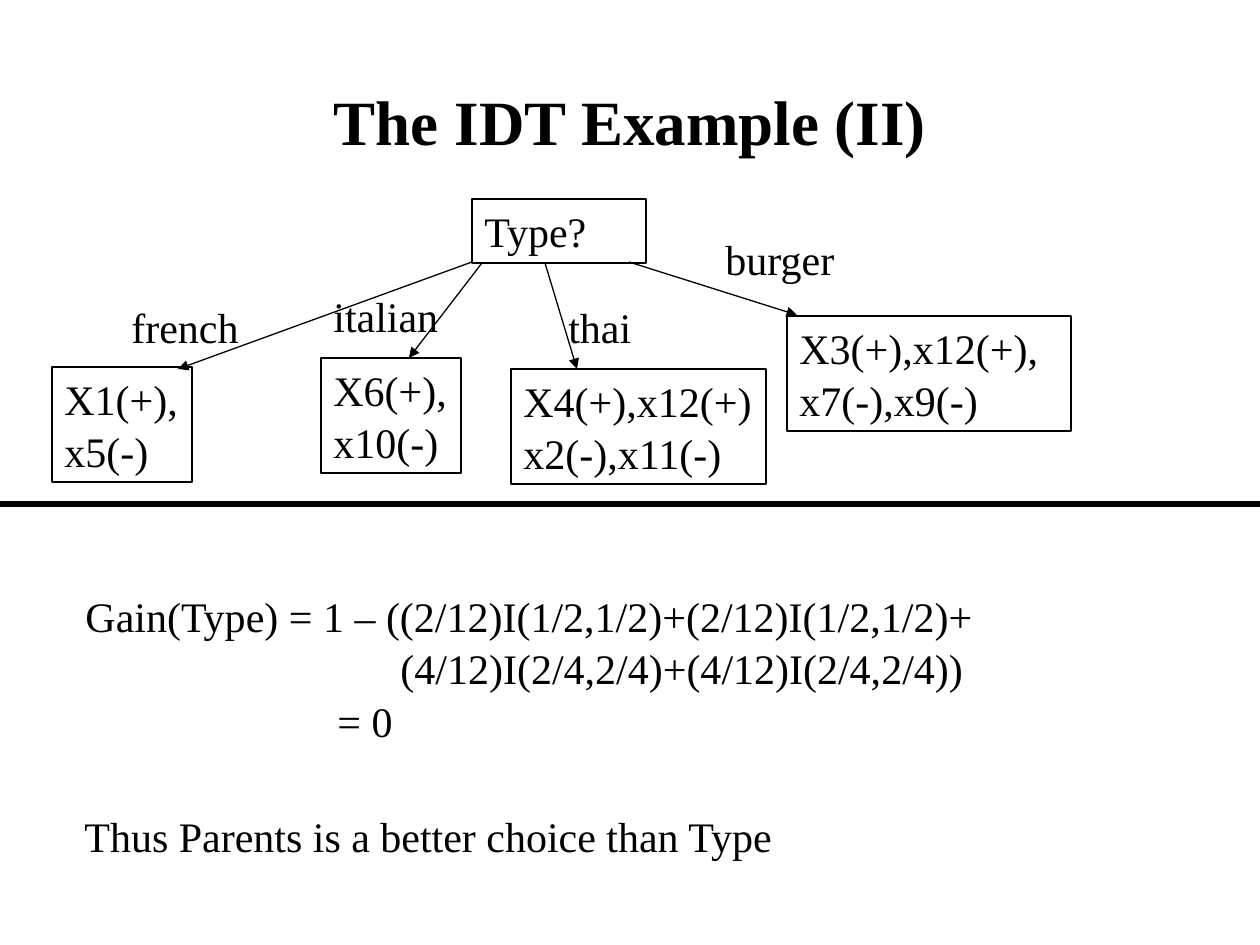
from dataclasses import dataclass

from lxml import etree
from pptx import Presentation, util as u
from pptx.dml.color import RGBColor
from pptx.enum import shapes as sh, text as tx
from pptx.oxml.ns import qn


@dataclass(frozen=True)
class Theme:
    ink: RGBColor = RGBColor(0, 0, 0)
    font: str = "Times New Roman"
    head: int = 36
    body: int = 24
    thin: float = 0.75
    thick: float = 3
    gap: float = 1.2


THEME = Theme()
WIDE, HIGH = 1260, 945


def px(n):
    return u.Emu(round(n * 914400 / 126))


def style(para, size, bold=False):
    font = para.font
    font.name, font.size, font.bold = THEME.font, u.Pt(size), bold
    font.color.rgb = THEME.ink


def write(shape, lines, dents=()):
    """Fill a shape with one paragraph per line; dents are left margins in px."""
    frame = shape.text_frame
    frame.word_wrap = True
    frame.vertical_anchor = tx.MSO_ANCHOR.TOP
    frame.margin_right = 0
    frame.text = "\n".join(lines)
    for para in frame.paragraphs:
        para.alignment = tx.PP_ALIGN.LEFT
        para.space_before = u.Pt(THEME.gap)
        style(para, THEME.body)
    for para, dent in zip(frame.paragraphs, dents):
        props = para._p.get_or_add_pPr()
        props.set("marL", str(px(dent)))
        props.set("indent", "0")


def label(slide, box, *lines, dents=()):
    write(slide.shapes.add_textbox(*map(px, box)), lines, dents)


def node(slide, box, *lines):
    rect = slide.shapes.add_shape(sh.MSO_SHAPE.RECTANGLE, *map(px, box))
    rect.shadow.inherit = False
    rect.fill.background()
    rect.line.color.rgb = THEME.ink
    rect.line.width = u.Pt(THEME.thin)
    write(rect, lines)


def line(slide, start, end, width, arrow=False):
    link = slide.shapes.add_connector(
        sh.MSO_CONNECTOR.STRAIGHT, *map(px, start + end))
    link.line.color.rgb = THEME.ink
    link.line.width = u.Pt(width)
    if arrow:
        tip = etree.SubElement(link.line._get_or_add_ln(), qn("a:tailEnd"))
        tip.set("type", "triangle")
    etree.SubElement(link._element.spPr, qn("a:effectLst"))


def title(slide, box, words):
    head = slide.shapes.title
    head.left, head.top, head.width, head.height = map(px, box)
    frame = head.text_frame
    frame.text = words
    frame.vertical_anchor = tx.MSO_ANCHOR.MIDDLE
    frame.paragraphs[0].alignment = tx.PP_ALIGN.CENTER
    style(frame.paragraphs[0], THEME.head, True)


def tree(slide, box):
    """Draw the split on Type; parts are placed from the box's corner."""
    left, top, _, _ = box

    def at(x, y, *size):
        return (left + x, top + y, *size)

    node(slide, at(420, 0, 174, 64), "Type?")
    # branch name and its box, leaf box and lines, arrow start and end
    branches = [
        ("french", (67, 96, 132, 63), (0, 168, 140, 115),
         ("X1(+),", "x5(-)"), (420, 63), (126, 170)),
        ("italian", (269, 85, 130, 63), (269, 159, 140, 115),
         ("X6(+),", "x10(-)"), (430, 64), (357, 159)),
        ("thai", (504, 96, 88, 63), (459, 170, 255, 115),
         ("X4(+),x12(+)", "x2(-),x11(-)"), (493, 64), (525, 170)),
        ("burger", (661, 28, 135, 63), (735, 117, 284, 115),
         ("X3(+),x12(+),", "x7(-),x9(-)"), (577, 63), (745, 116)),
    ]
    for name, tag, leaf, lines, start, end in branches:
        label(slide, at(*tag), name)
        node(slide, at(*leaf), *lines)
        line(slide, at(*start), at(*end), THEME.thin, arrow=True)


def proof(slide, box):
    left, top, width, _ = box
    label(slide, (left + 1, top, width, 164),
          "Gain(Type) = 1 – ((2/12)I(1/2,1/2)+(2/12)I(1/2,1/2)+",
          "(4/12)I(2/4,2/4)+(4/12)I(2/4,2/4))",
          "= 0", dents=(0, 315, 252))
    label(slide, (left, top + 220, width, 63),
          "Thus Parents is a better choice than Type")


def main():
    deck = Presentation()
    deck.slide_width, deck.slide_height = px(WIDE), px(HIGH)
    slide = deck.slides.add_slide(deck.slide_layouts[5])
    title(slide, (94, 42, 1072, 157), "The IDT Example (II)")
    line(slide, (0, 504), (WIDE, 504), THEME.thick)
    tree(slide, (52, 199, 1019, 285))
    proof(slide, (72, 584, 915, 283))
    deck.save("out.pptx")


if __name__ == "__main__":
    main()
